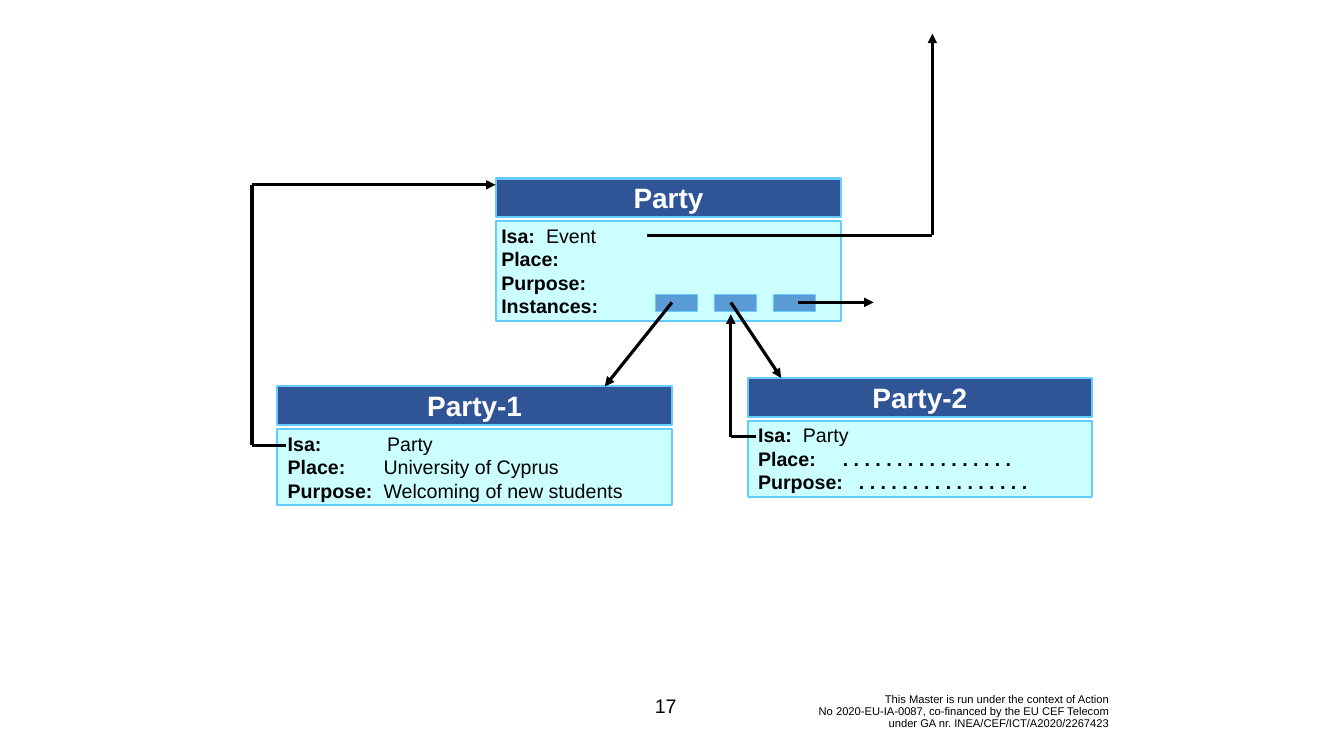
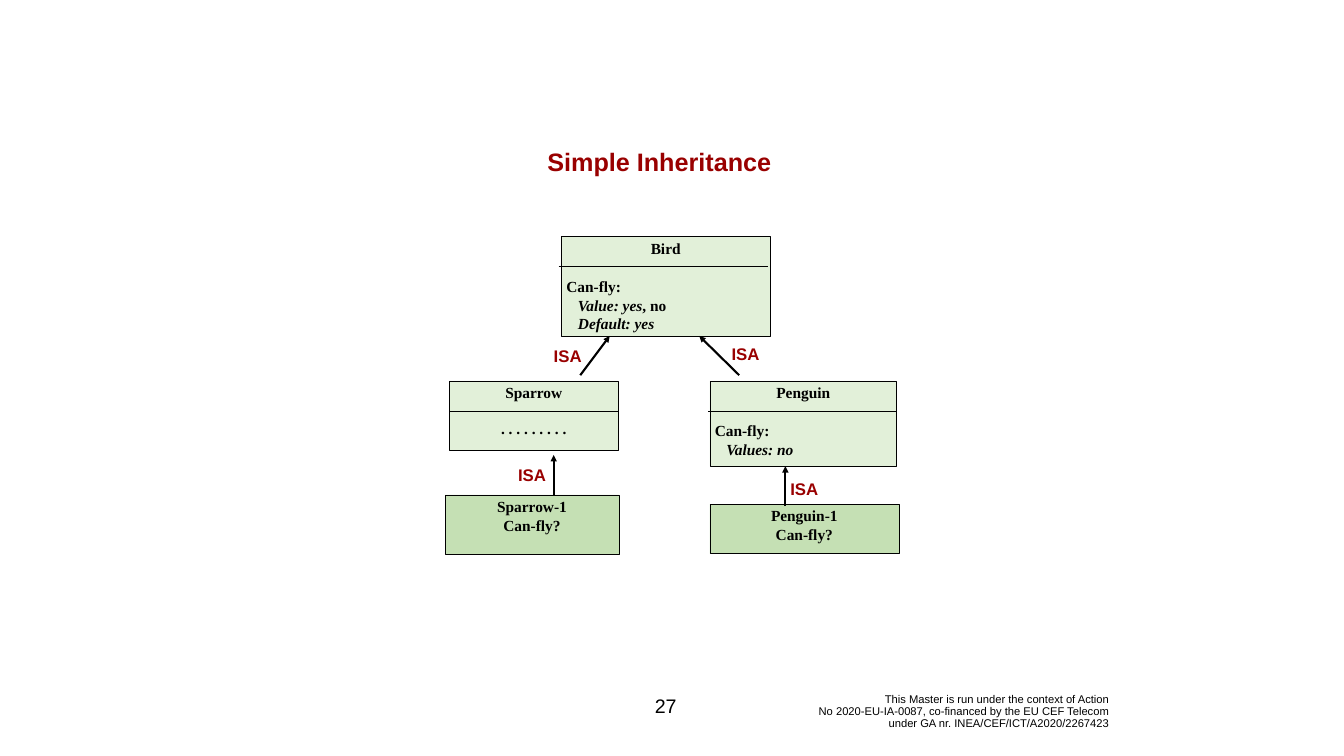
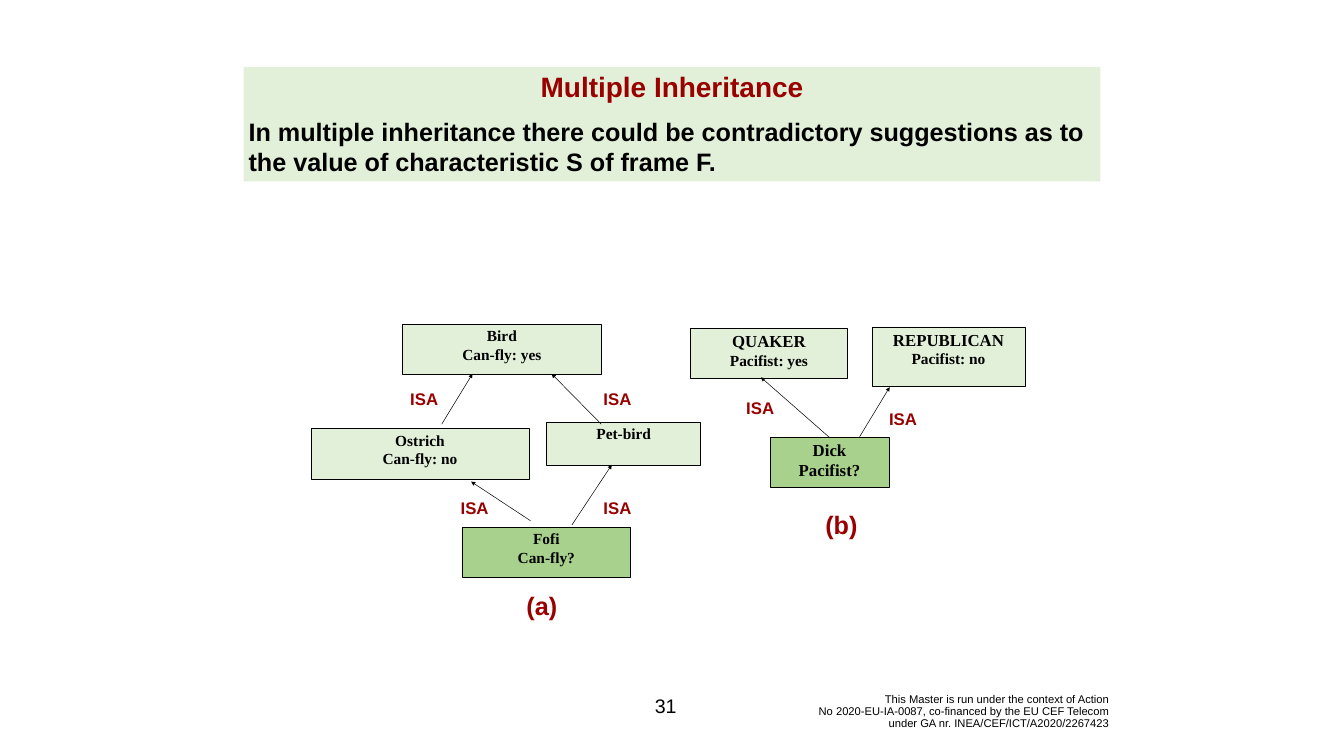
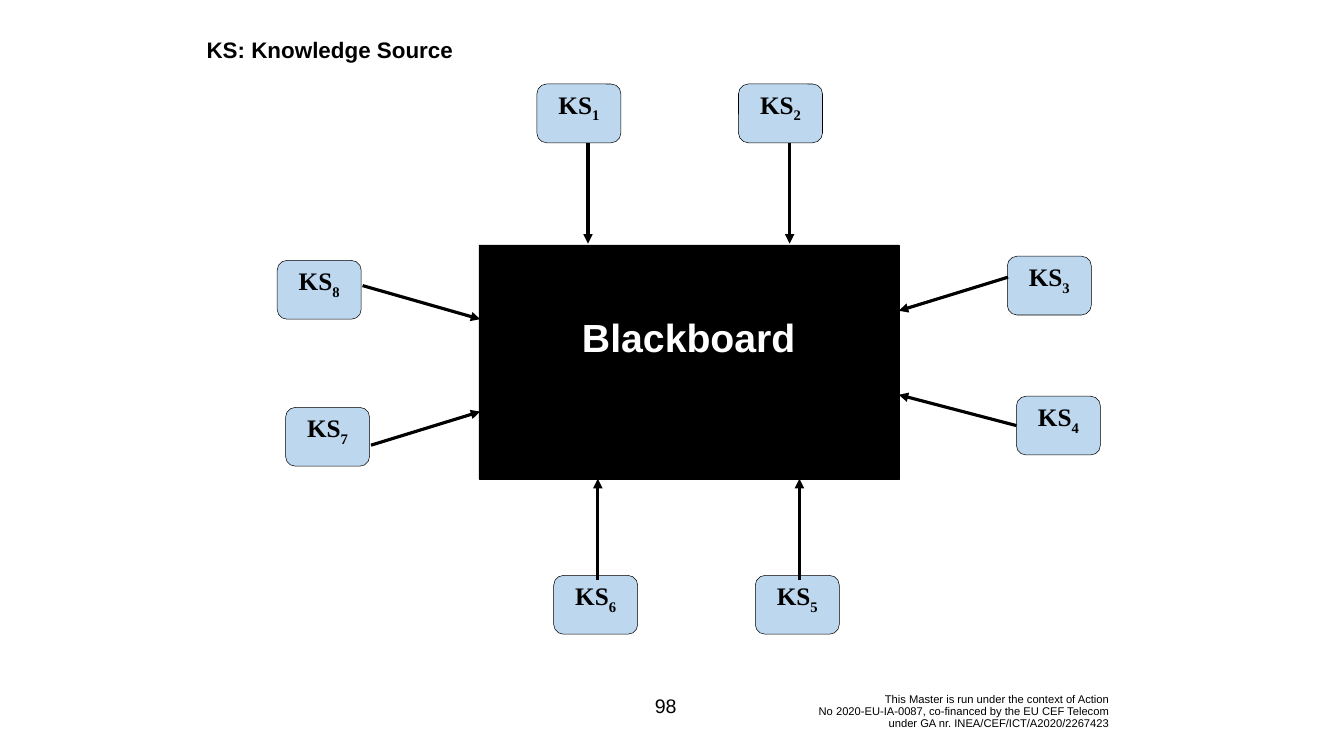
from lxml.etree import SubElement
from pptx import Presentation
from pptx.dml.color import RGBColor
from pptx.enum.shapes import MSO_CONNECTOR, MSO_SHAPE
from pptx.enum.text import MSO_ANCHOR, PP_ALIGN
from pptx.oxml.ns import qn
from pptx.util import Pt

SANS, SERIF = "Arial", "Times New Roman"
BLACK, WHITE, RED = "000000", "FFFFFF", "990000"
NAVY, CYAN, SKY, BLUE = "2F5597", "CCFFFF", "66CCFF", "5B9BD5"
PALE_GREEN, MID_GREEN, GREEN, PALE_BLUE = "E2F0D9", "C5E0B4", "A9D18E", "BDD7EE"
LEFT, CENTER, RIGHT = PP_ALIGN.LEFT, PP_ALIGN.CENTER, PP_ALIGN.RIGHT
RECT, ROUNDED = MSO_SHAPE.RECTANGLE, MSO_SHAPE.ROUNDED_RECTANGLE

FOOTER = [
    "This Master is run under the context of Action",
    "No 2020-EU-IA-0087, co-financed by the EU CEF Telecom",
    "under GA nr. INEA/CEF/ICT/A2020/2267423",
]
FOOTER_BOX = (1081.5, 989.5, 510, 54.5)
NUMBER_BOX = (911, 980, 80, 57.5)

# Frames: name, left, top, width, left margin, slots (label, value, value style, tab)
DOTS = ". . . . . . . . . . . . . . . ."
PARTY_FRAMES = [
    ("Party", 709, 255, 492, 7.2, [
        ("Isa:", "Event", "", 64), ("Place:", "", "", 0),
        ("Purpose:", "", "", 0), ("Instances:", "", "", 0)]),
    ("Party-1", 396, 552, 564, 15, [
        ("Isa:", "Party", "", 142), ("Place:", "University of Cyprus", "", 137),
        ("Purpose:", "Welcoming of new students", "", 137)]),
    ("Party-2", 1068, 540, 492, 15, [
        ("Isa:", "Party", "", 64), ("Place:", DOTS, "b", 121), ("Purpose:", DOTS, "b", 144)]),
]
NAME_HEIGHT, SLOTS_OFFSET, SLOT_HEIGHT = 55.5, 61, 34
INSTANCES_LEFT, INSTANCES_TOP, INSTANCE_STEP, INSTANCE_COUNT = 936, 420, 84, 3
PARTY_ROUTES = [
    [(960, 432), (864, 552)],
    [(1044, 432), (1116, 540)],
    [(1140, 432), (1248, 432)],
    [(408, 636), (360, 636), (360, 264), (708, 264)],
    [(1080, 624), (1044, 624), (1044, 449)],
    [(924, 336), (1332, 336), (1332, 48)],
]

# Nodes: left, top, width, height, fill, paragraphs
SIMPLE_TITLE = ("Simple Inheritance", 624, 206, 636, 51)
SIMPLE_NODES = [
    (802, 338, 298, 142, PALE_GREEN, [
        dict(runs=[("Bird", "b")]),
        dict(runs=[("Can-fly:", "b")], align=LEFT, before=28),
        dict(runs=[("Value: yes", "bi"), (", no", "b")], align=LEFT, indent=16.5),
        dict(runs=[("Default: yes", "bi")], align=LEFT, indent=16.5)]),
    (642, 544, 241, 99.5, PALE_GREEN, [
        dict(runs=[("Sparrow", "b")]),
        dict(runs=[(". . . . . . . . .", "b")], before=25)]),
    (1014, 544, 267, 122, PALE_GREEN, [
        dict(runs=[("Penguin", "b")]),
        dict(runs=[("Can-fly:", "b")], align=LEFT, before=28),
        dict(runs=[("Values: no", "bi")], align=LEFT, indent=16.5)]),
    (636, 707, 248, 85, MID_GREEN, [
        dict(runs=[("Sparrow-1", "b")]), dict(runs=[("Can-fly?", "b")])]),
    (1014, 720, 270, 71, MID_GREEN, [
        dict(runs=[("Penguin-1", "b")]), dict(runs=[("Can-fly?", "b")])]),
]
NAME_RULES = [(642, 883, 587), (798, 1097, 380), (1012, 1281, 587)]
SIMPLE_ROUTES = [
    [(829, 536), (871, 480)], [(1056, 536), (999, 480)],
    [(1122, 723), (1122, 666)], [(791, 707), (791, 650)],
]
SIMPLE_ISA = [(745, 490), (999, 488), (694, 661), (1083, 681)]

BANNER_BOX = (348, 96, 1224, 163)
BANNER = [
    dict(runs=[("Multiple Inheritance", "b")], size=40, color=RED),
    dict(runs=[("In multiple inheritance there could be contradictory suggestions "
                "as to the value of characteristic S of frame F.", "b")],
         align=LEFT, before=18.5),
]
MULTIPLE_NODES = [
    (575, 463, 284, 71, PALE_GREEN, [
        dict(runs=[("Bird", "b")]), dict(runs=[("Can-fly: yes", "b")])]),
    (444, 612, 312, 72, PALE_GREEN, [
        dict(runs=[("Ostrich", "b")]), dict(runs=[("Can-fly: no", "b")])]),
    (781, 603, 220, 62, PALE_GREEN, [dict(runs=[("Pet-bird", "b")])]),
    (660, 753, 241, 71, GREEN, [
        dict(runs=[("Fofi", "b")]), dict(runs=[("Can-fly?", "b")])]),
    (986, 469, 225, 71, PALE_GREEN, [
        dict(runs=[("QUAKER", "b")], size=24), dict(runs=[("Pacifist: yes", "b")])]),
    (1246, 467, 218, 85, PALE_GREEN, [
        dict(runs=[("REPUBLICAN", "b")], size=24), dict(runs=[("Pacifist: no", "b")])]),
    (1100, 625, 170, 71, GREEN, [
        dict(runs=[("Dick", "b")], size=24), dict(runs=[("Pacifist?", "b")], size=24)]),
]
MULTIPLE_ROUTES = [
    [(631, 606), (675, 534)], [(859, 606), (788, 534)],
    [(758, 744), (673, 688)], [(817, 750), (874, 664)],
    [(1185, 625), (1087, 539)], [(1228, 624), (1271, 553)],
]
MULTIPLE_ISA = [(540, 552), (1020, 564), (816, 552), (1224, 581), (612, 708), (816, 708)]
CASE_LABELS = [("(a)", 708, 840, 132, 51), ("(b)", 1136, 724, 132, 51)]

LEGEND = ("KS: Knowledge Source", 288, 48, 379, 46)
BOARD_BOX = (684, 350, 600, 334)
# Knowledge sources in order: left, top, arrow start, arrow end
SOURCES = [
    (767, 120, (840, 204), (840, 348)),
    (1055, 120, (1128, 204), (1128, 348)),
    (1439, 366, (1440, 396), (1284, 444)),
    (1452, 566, (1452, 608), (1284, 564)),
    (1079, 822, (1142, 828), (1142, 684)),
    (791, 822, (854, 828), (854, 684)),
    (408, 582, (530, 636), (686, 588)),
    (396, 372, (518, 408), (686, 456)),
]


def rgb(color):
    return RGBColor.from_string(color)


def points(*lengths):
    return [Pt(length) for length in lengths]


def write(shape, paragraphs, size, font=SANS, color=BLACK, align=CENTER,
          anchor=MSO_ANCHOR.TOP, margin_left=7.2, margin_top=3.6):
    """Fill a shape; run styles are letters: b bold, i italic, s subscript."""
    frame = shape.text_frame
    frame.word_wrap = True
    frame.vertical_anchor = anchor
    frame.margin_left, frame.margin_top = points(margin_left, margin_top)
    for index, content in enumerate(paragraphs):
        paragraph = frame.add_paragraph() if index else frame.paragraphs[0]
        paragraph.alignment = content.get("align", align)
        if "before" in content:
            paragraph.space_before = Pt(content["before"])
        properties = paragraph._p.get_or_add_pPr()
        if "indent" in content:
            properties.set("marL", str(Pt(content["indent"])))
        if content.get("tab"):
            stops = SubElement(properties, qn("a:tabLst"))
            SubElement(stops, qn("a:tab"), pos=str(Pt(content["tab"])), algn="l")
        for text, style in content["runs"]:
            run = paragraph.add_run()
            run.text = text
            run.font.name = font
            run.font.size = Pt(content.get("size", size))
            run.font.color.rgb = rgb(content.get("color", color))
            run.font.bold = "b" in style
            run.font.italic = "i" in style
            if "s" in style:
                run.font._element.set("baseline", "-25000")


def add_box(slide, box, fill, line=BLACK, width=0.75, kind=RECT):
    shape = slide.shapes.add_shape(kind, *points(*box))
    shape.shadow.inherit = False
    shape.fill.solid()
    shape.fill.fore_color.rgb = rgb(fill)
    if line:
        shape.line.color.rgb = rgb(line)
        shape.line.width = Pt(width)
    else:
        shape.line.fill.background()
    return shape


def add_label(slide, text, left, top, width, height, size, color=RED, align=CENTER):
    label = slide.shapes.add_textbox(*points(left, top, width, height))
    write(label, [dict(runs=[(text, "b")])], size, color=color, align=align)


def add_line(slide, start, end, width, arrow=False):
    line = slide.shapes.add_connector(MSO_CONNECTOR.STRAIGHT, *points(*start, *end))
    line.line.color.rgb = rgb(BLACK)
    line.line.width = Pt(width)
    SubElement(line._element.spPr, qn("a:effectLst"))
    if arrow:
        SubElement(line.line._get_or_add_ln(), qn("a:tailEnd"), type="triangle")
    return line


def side_at(boxes, point):
    """Find the box and side whose middle lies at the point, within one point."""
    for box in boxes:
        middle_x, middle_y = box.left + box.width / 2, box.top + box.height / 2
        sides = [(middle_x, box.top), (box.left, middle_y),
                 (middle_x, box.top + box.height), (box.left + box.width, middle_y)]
        for side, (x, y) in enumerate(sides):
            if max(abs(x - Pt(point[0])), abs(y - Pt(point[1]))) <= Pt(1):
                return box, side
    return None


def add_routes(slide, routes, boxes, width):
    """Draw each route as straight legs with an arrowhead on the last one."""
    for route in routes:
        for leg, (start, end) in enumerate(zip(route, route[1:]), 2):
            line = add_line(slide, start, end, width, arrow=leg == len(route))
            for join, point in ((line.begin_connect, start), (line.end_connect, end)):
                target = side_at(boxes, point)
                if target:
                    join(*target)


def add_nodes(slide, nodes):
    boxes = []
    for *box, fill, paragraphs in nodes:
        node = add_box(slide, box, fill)
        write(node, paragraphs, 22, SERIF)
        boxes.append(node)
    return boxes


def add_isa_labels(slide, places):
    for left, top in places:
        add_label(slide, "ISA", left, top, 132, 36, 24)


def new_slide(deck, number):
    slide = deck.slides.add_slide(deck.slide_layouts[6])
    footer = slide.shapes.add_textbox(*points(*FOOTER_BOX))
    write(footer, [dict(runs=[])], 16, align=RIGHT, anchor=MSO_ANCHOR.MIDDLE)
    paragraph = footer.text_frame.paragraphs[0]
    paragraph.line_spacing = 0.9
    for index, text in enumerate(FOOTER):
        if index:
            paragraph.add_line_break()
        run = paragraph.add_run()
        run.text = text
        run.font.name, run.font.size = SANS, Pt(16)
        run.font.color.rgb = rgb(BLACK)
    page = slide.shapes.add_textbox(*points(*NUMBER_BOX))
    write(page, [dict(runs=[(str(number), "")])], 28, anchor=MSO_ANCHOR.MIDDLE)
    return slide


def build_party(deck):
    slide = new_slide(deck, 17)
    boxes = []
    for name, left, top, width, margin, slots in PARTY_FRAMES:
        head = add_box(slide, (left, top, width, NAME_HEIGHT), NAVY, SKY, 3)
        write(head, [dict(runs=[(name, "b")])], 40, color=WHITE)
        height = SLOT_HEIGHT * len(slots) + 7
        body = add_box(slide, (left, top + SLOTS_OFFSET, width, height), CYAN, SKY, 3)
        rows = []
        for label, value, style, tab in slots:
            runs = [(label, "b")]
            if value:
                runs.append(("\t" + value, style))
            rows.append(dict(runs=runs, tab=tab))
        write(body, rows, 28, align=LEFT, margin_left=margin)
        boxes += [head, body]
    for index in range(INSTANCE_COUNT):
        left = INSTANCES_LEFT + index * INSTANCE_STEP
        boxes.append(add_box(slide, (left, INSTANCES_TOP, 60, 24), BLUE, SKY))
    add_routes(slide, PARTY_ROUTES, boxes, 4.5)


def build_simple_inheritance(deck):
    slide = new_slide(deck, 27)
    boxes = add_nodes(slide, SIMPLE_NODES)
    for left, right, y in NAME_RULES:
        add_line(slide, (left, y), (right, y), 0.75)
    add_routes(slide, SIMPLE_ROUTES, boxes, 3)
    add_isa_labels(slide, SIMPLE_ISA)
    add_label(slide, *SIMPLE_TITLE, 36)


def build_multiple_inheritance(deck):
    slide = new_slide(deck, 31)
    write(add_box(slide, BANNER_BOX, PALE_GREEN, line=None), BANNER, 36)
    boxes = add_nodes(slide, MULTIPLE_NODES)
    add_routes(slide, MULTIPLE_ROUTES, boxes, 0.75)
    add_isa_labels(slide, MULTIPLE_ISA)
    for case in CASE_LABELS:
        add_label(slide, *case, 36)


def build_blackboard(deck):
    slide = new_slide(deck, 98)
    boxes = []
    for number, (left, top, _, _) in enumerate(SOURCES, 1):
        source = add_box(slide, (left, top, 120, 84), PALE_BLUE, kind=ROUNDED)
        write(source, [dict(runs=[("KS", "b"), (str(number), "bs")])], 36, SERIF)
        boxes.append(source)
    board = add_box(slide, BOARD_BOX, BLACK)
    write(board, [dict(runs=[("Blackboard", "b")])], 56, color=WHITE, margin_top=98)
    add_routes(slide, [arrow for _, _, *arrow in SOURCES], boxes + [board], 4.5)
    add_label(slide, *LEGEND, 32, color=BLACK, align=LEFT)


def main():
    deck = Presentation()
    deck.slide_width, deck.slide_height = points(1920, 1080)
    build_party(deck)
    build_simple_inheritance(deck)
    build_multiple_inheritance(deck)
    build_blackboard(deck)
    deck.save("out.pptx")


if __name__ == "__main__":
    main()
